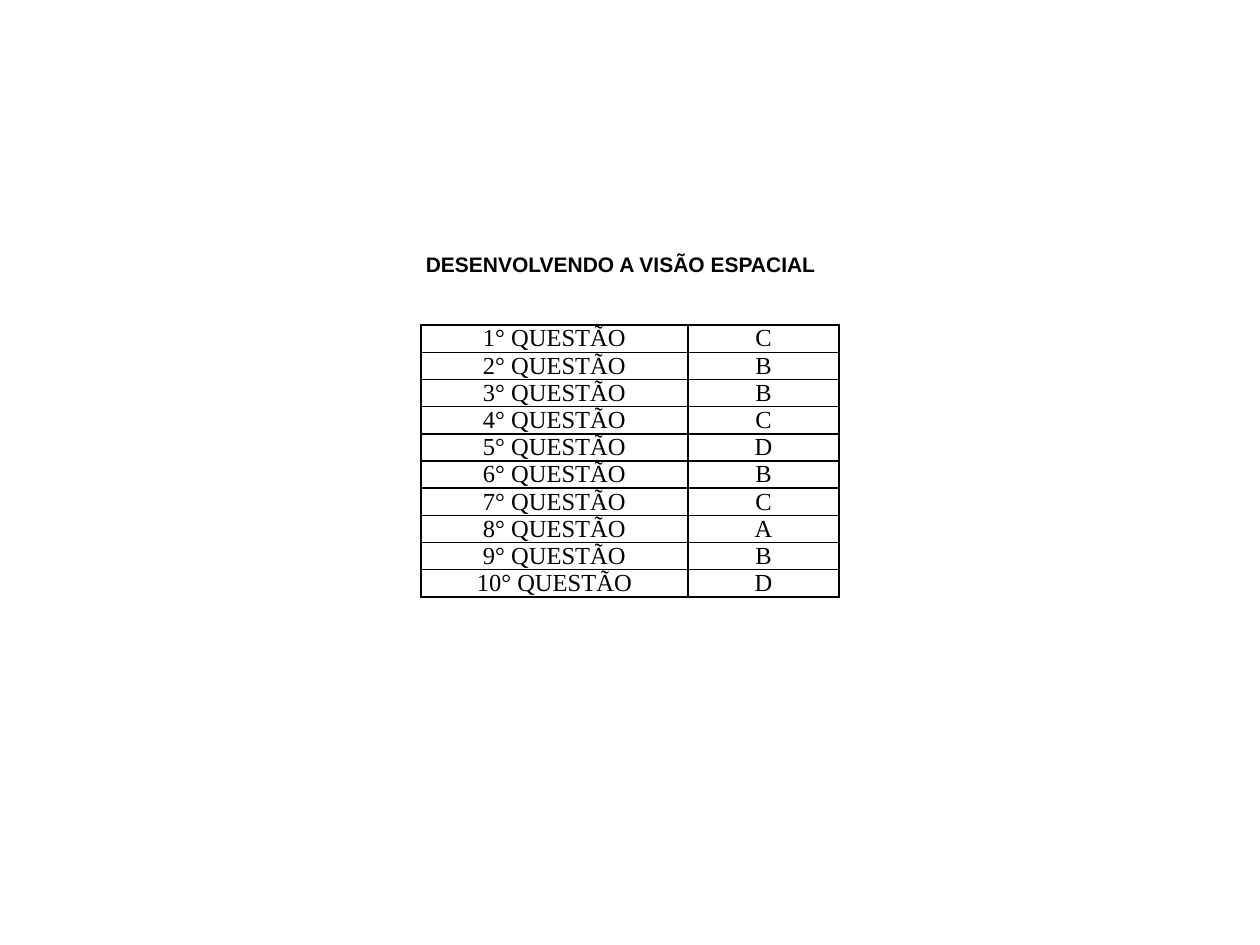
import dataclasses

import pptx
import pptx.dml.color
import pptx.enum.text
import pptx.oxml
import pptx.oxml.ns
import pptx.util

INK = "000000"
ANSWERS = "CBBCDBCABD"


@dataclasses.dataclass
class Box:
    """Position and size in inches."""
    left: float
    top: float
    width: float
    height: float

    def lengths(self) -> list[pptx.util.Length]:
        return [pptx.util.Inches(v) for v in dataclasses.astuple(self)]


@dataclasses.dataclass
class Answer:
    question: str
    letter: str


TITLE_BOX = Box(3.28, 1.95, 3.33, 0.61)
TABLE_BOX = Box(3.34, 2.58, 3.32, 2.16)
COLUMN_WIDTHS = (2.12, 1.2)


def color(value: str) -> pptx.dml.color.RGBColor:
    return pptx.dml.color.RGBColor.from_string(value)


def set_attributes(target: object, values: dict) -> None:
    for name, value in values.items():
        setattr(target, name, value)


def write_text(tf, text: str, align, font: dict) -> None:
    p = tf.paragraphs[0]
    p.alignment = align
    r = p.add_run()
    r.text = text
    set_attributes(r.font, font)
    r.font.color.rgb = color(INK)


def add_borders(cell, width: pptx.util.Length) -> None:
    props = cell._tc.get_or_add_tcPr()
    ns = pptx.oxml.ns.nsdecls("a")
    for i, side in enumerate(("lnL", "lnR", "lnT", "lnB")):
        props.insert(i, pptx.oxml.parse_xml(
            f'<a:{side} {ns} w="{int(width)}"><a:solidFill>'
            f'<a:srgbClr val="{INK}"/></a:solidFill></a:{side}>'))


def place_title(s, text: str) -> None:
    title = s.shapes.title
    title.left, title.top, title.width, title.height = TITLE_BOX.lengths()
    tf = title.text_frame
    set_attributes(tf, {
        "word_wrap": False,
        "auto_size": pptx.enum.text.MSO_AUTO_SIZE.NONE,
        "vertical_anchor": pptx.enum.text.MSO_ANCHOR.TOP,
    })
    write_text(tf, text, pptx.enum.text.PP_ALIGN.LEFT,
               {"name": "Arial", "size": pptx.util.Pt(12), "bold": True})


def add_answer_table(s, answers: list[Answer]) -> None:
    table = s.shapes.add_table(
        len(answers), len(COLUMN_WIDTHS), *TABLE_BOX.lengths()).table
    set_attributes(table, {"first_row": False, "horz_banding": False})
    for column, width in zip(table.columns, COLUMN_WIDTHS):
        column.width = pptx.util.Inches(width)
    side = pptx.util.Inches(0.07)
    margins = {"margin_left": side, "margin_right": side,
               "margin_top": 0, "margin_bottom": 0}
    font = {"name": "Times New Roman", "size": pptx.util.Pt(14), "bold": False}
    for row, answer in zip(table.rows, answers):
        for cell, text in zip(row.cells, dataclasses.astuple(answer)):
            set_attributes(cell, margins)
            cell.fill.background()
            add_borders(cell, pptx.util.Pt(1))
            write_text(cell.text_frame, text,
                       pptx.enum.text.PP_ALIGN.CENTER, font)


def main() -> None:
    prs = pptx.Presentation()
    prs.slide_width = pptx.util.Inches(10)
    prs.slide_height = pptx.util.Inches(7.5)
    s = prs.slides.add_slide(prs.slide_layouts.get_by_name("Title Only"))
    place_title(s, "DESENVOLVENDO A VISÃO ESPACIAL")
    add_answer_table(s, [Answer(f"{n}° QUESTÃO", letter)
                         for n, letter in enumerate(ANSWERS, start=1)])
    prs.save("out.pptx")


if __name__ == "__main__":
    main()
